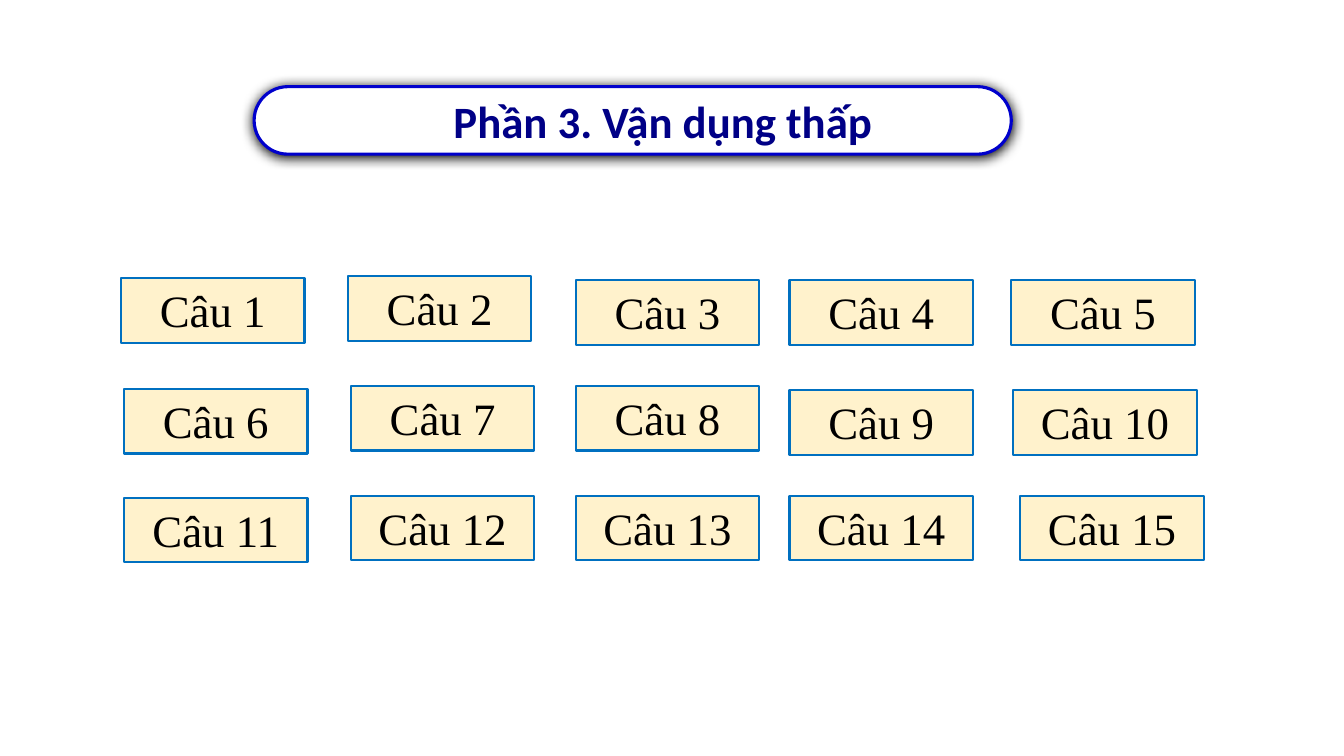
import pptx
import pptx.dml.color
import pptx.enum.shapes
import pptx.enum.text
import pptx.oxml.ns
import pptx.util
from lxml import etree

Inches = pptx.util.Inches
MSO_SHAPE = pptx.enum.shapes.MSO_SHAPE
ANCHOR = pptx.enum.text.MSO_ANCHOR
AUTO_SIZE = pptx.enum.text.MSO_AUTO_SIZE
qn = pptx.oxml.ns.qn


class Theme:
    title_fill = "FFFFFF"
    title_line = "0000CC"
    title_text = "000086"
    title_font = "Calibri"
    button_fill = "FFF2CC"
    button_line = "0070C0"
    button_text = "000000"
    button_font = "Times New Roman"
    shadow = "000000"
    size = 32


def rgb(value):
    return pptx.dml.color.RGBColor.from_string(value)


def add_box(slide, text, kind, box, *, fill, line, width, font, color,
            bold=False, anchor=ANCHOR.TOP):
    sp = slide.shapes.add_shape(kind, *(Inches(v) for v in box))
    sp.shadow.inherit = False
    sp.fill.solid()
    sp.fill.fore_color.rgb = rgb(fill)
    sp.line.color.rgb = rgb(line)
    sp.line.width = pptx.util.Pt(width)
    tf = sp.text_frame
    tf.word_wrap = True
    tf.vertical_anchor = anchor
    p = tf.paragraphs[0]
    p.alignment = pptx.enum.text.PP_ALIGN.CENTER
    r = p.add_run()
    r.text = text
    r.font.name = font
    r.font.size = pptx.util.Pt(Theme.size)
    r.font.bold = bold
    r.font.color.rgb = rgb(color)
    return sp


prs = pptx.Presentation()
prs.slide_width, prs.slide_height = Inches(13.33), Inches(7.5)
s = prs.slides.add_slide(prs.slide_layouts[6])

# Title pill, its text set right of centre by a wider left inset
title = add_box(s, "Phần 3. Vận dụng thấp", MSO_SHAPE.ROUNDED_RECTANGLE,
                (2.52, 0.86, 7.51, 0.67), fill=Theme.title_fill,
                line=Theme.title_line, width=2.25, font=Theme.title_font,
                color=Theme.title_text, bold=True, anchor=ANCHOR.MIDDLE)
title.adjustments[0] = 0.5
title.text_frame.margin_left = Inches(0.7)

# Soft shadow under the title
effects = title._element.spPr.find(qn("a:effectLst"))
shadow = etree.SubElement(effects, qn("a:outerShdw"), blurRad=str(pptx.util.Pt(8.5)),
                          dist=str(pptx.util.Pt(1)), dir="5400000",
                          algn="ctr", rotWithShape="0")
etree.SubElement(shadow, qn("a:srgbClr"), val=Theme.shadow)

# Question buttons: (left, top) of each, row by row
button_rows = [
    [(1.2, 2.76), (3.45, 2.74), (5.71, 2.78), (7.83, 2.78), (10.03, 2.78)],
    [(1.23, 3.86), (3.48, 3.83), (5.71, 3.83), (7.83, 3.87), (10.05, 3.87)],
    [(1.23, 4.94), (3.48, 4.92), (5.71, 4.92), (7.83, 4.92), (10.12, 4.92)],
]
for row, places in enumerate(button_rows):
    for number, (left, top) in enumerate(places, start=row * len(places) + 1):
        button = add_box(s, f"Câu {number}", MSO_SHAPE.RECTANGLE,
                         (left, top, 1.82, 0.64), fill=Theme.button_fill,
                         line=Theme.button_line, width=1.5,
                         font=Theme.button_font, color=Theme.button_text)
        button.text_frame.auto_size = AUTO_SIZE.SHAPE_TO_FIT_TEXT

prs.save("out.pptx")
